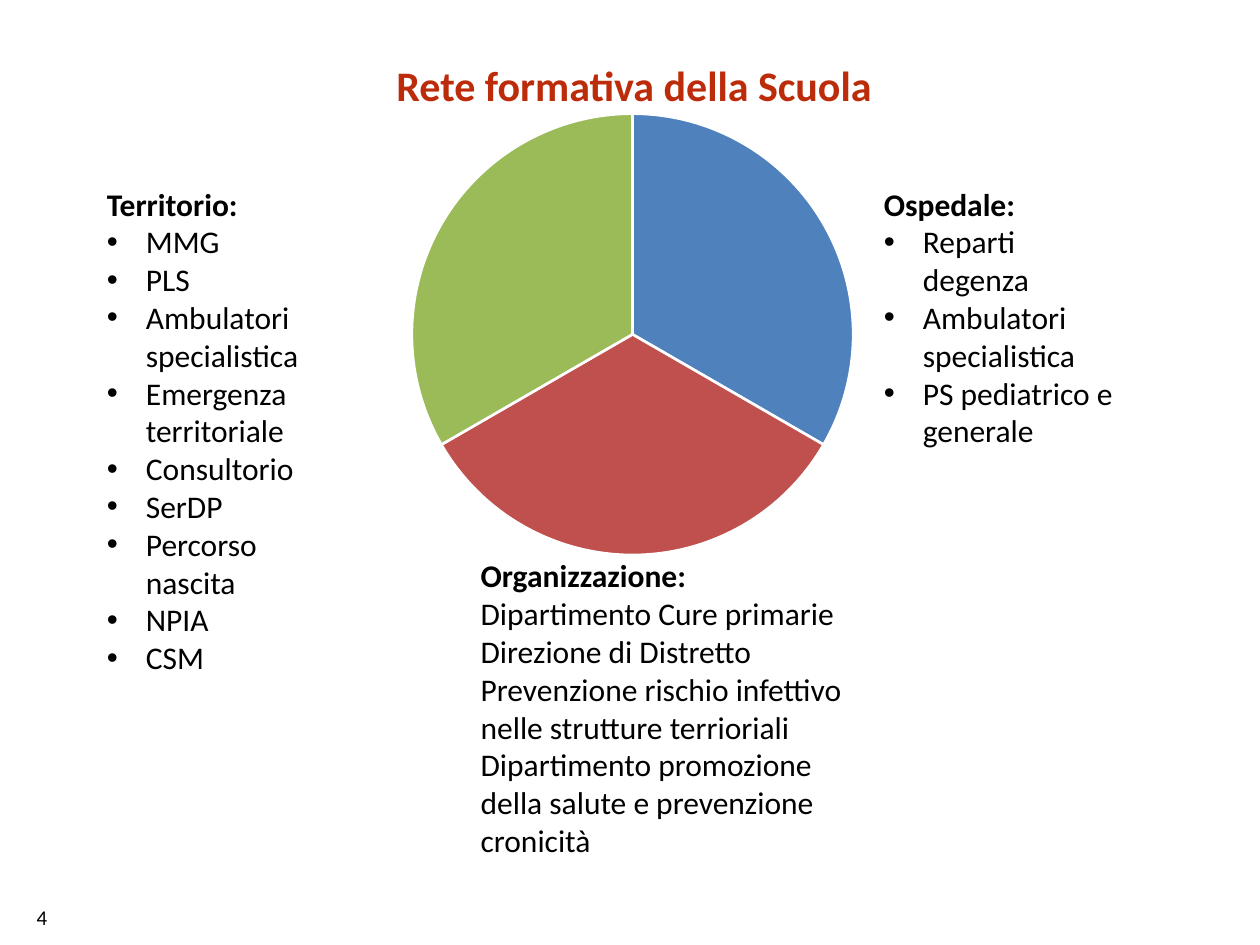
"""Build the slide on the training network of the school."""
from lxml.etree import SubElement
from pptx import Presentation
from pptx.chart.data import CategoryChartData
from pptx.dml.color import RGBColor
from pptx.enum.chart import XL_CHART_TYPE
from pptx.enum.text import MSO_ANCHOR, MSO_AUTO_SIZE, PP_ALIGN
from pptx.oxml import parse_xml
from pptx.oxml.ns import nsdecls, qn
from pptx.util import Inches, Pt

FONT = "Calibri"
BLACK = RGBColor(0x00, 0x00, 0x00)
WHITE = RGBColor(0xFF, 0xFF, 0xFF)
RUST = RGBColor(0xBC, 0x2B, 0x0A)
SLICES = (
    RGBColor(0x4F, 0x81, 0xBD),
    RGBColor(0xC0, 0x50, 0x4D),
    RGBColor(0x9B, 0xBB, 0x59),
)

CELL = Inches(1) / 12

TERRITORY = (
    "MMG", "PLS", "Ambulatori specialistica", "Emergenza territoriale",
    "Consultorio", "SerDP", "Percorso nascita", "NPIA", "CSM",
)
HOSPITAL = ("Reparti degenza", "Ambulatori specialistica", "PS pediatrico e generale")
ORGANISATION = (
    "Dipartimento Cure primarie",
    "Direzione di Distretto",
    "Prevenzione rischio infettivo nelle strutture terrioriali",
    "Dipartimento promozione della salute e prevenzione cronicità",
)


def area(column, row, columns, rows):
    """Turn grid cells of a twelfth of an inch into left, top, width and height."""
    return [round(cells * CELL) for cells in (column, row, columns, rows)]


def write(paragraph, text, size=18, color=BLACK, bold=False, indent=0, bullet=False):
    """Write one formatted paragraph, with an optional indent and bullet."""
    paragraph.alignment = PP_ALIGN.LEFT
    properties = paragraph._p.get_or_add_pPr()
    properties.set("marL", str(Inches(indent)))
    properties.set("indent", str(-Inches(indent) if bullet else 0))
    if bullet:
        SubElement(properties, qn("a:buFont")).set("typeface", "Arial")
        SubElement(properties, qn("a:buChar")).set("char", "•")
    run = paragraph.add_run()
    run.text = text
    run.font.name = FONT
    run.font.size = Pt(size)
    run.font.bold = bold
    run.font.color.rgb = color


def clear_margins(frame, top=0):
    """Remove the insets of a text frame, keeping an optional top one."""
    frame.margin_left = frame.margin_right = frame.margin_bottom = 0
    frame.margin_top = Inches(top)


def add_title(slide, text):
    """Place and write the slide title."""
    title = slide.shapes.title
    title.left, title.top, title.width, title.height = area(6.2, 5.4, 104, 9.7)
    frame = title.text_frame
    clear_margins(frame, top=0.02)
    frame.vertical_anchor = MSO_ANCHOR.TOP
    frame.auto_size = MSO_AUTO_SIZE.NONE
    write(frame.paragraphs[0], text, size=24, color=RUST, bold=True, indent=2.63)


def add_pie(slide):
    """Add the pie with one equal slice for each part of the network."""
    data = CategoryChartData()
    data.categories = ["1", "2", "3"]
    data.add_series("Series 1", [33] * len(SLICES))
    chart = slide.shapes.add_chart(
        XL_CHART_TYPE.PIE, *area(25.4, 9, 69, 45.7), data
    ).chart
    chart.has_legend = False
    chart.has_title = False
    chart.font.name = FONT
    chart.font.size = Pt(10)
    chart.font.color.rgb = BLACK
    plot = chart.plots[0]
    plot.vary_by_categories = True
    for index, color in enumerate(SLICES):
        style = plot.series[0].points[index].format
        style.fill.solid()
        style.fill.fore_color.rgb = color
        style.line.color.rgb = WHITE
        style.line.width = Pt(1.5)
    set_plot_area(chart, x=0.2, y=0.04, w=0.61, h=0.92)


def set_plot_area(chart, **shares):
    """Fix the inner plot area as shares of the chart size."""
    plot_area = chart._chartSpace.chart.plotArea
    for layout in plot_area.findall(qn("c:layout")):
        plot_area.remove(layout)
    sizes = "".join(f'<c:{side} val="{share}"/>' for side, share in shares.items())
    plot_area.insert(0, parse_xml(
        f'<c:layout {nsdecls("c")}><c:manualLayout><c:layoutTarget val="inner"/>'
        f'<c:xMode val="edge"/><c:yMode val="edge"/>{sizes}'
        f'</c:manualLayout></c:layout>'
    ))


def add_list(slide, place, heading, entries, bullet=True):
    """Add a bold heading with its entries below."""
    frame = slide.shapes.add_textbox(*area(*place)).text_frame
    frame.word_wrap = True
    write(frame.paragraphs[0], heading, bold=True)
    for entry in entries:
        write(frame.add_paragraph(), entry, bullet=bullet, indent=0.31 if bullet else 0)


def add_page_number(slide, number):
    """Add the page number in the bottom left corner."""
    frame = slide.shapes.add_textbox(*area(3, 86.5, 3.2, 2.3)).text_frame
    frame.word_wrap = True
    clear_margins(frame)
    write(frame.paragraphs[0], number, size=12, indent=0.04)
    frame.paragraphs[0].line_spacing = Pt(12.4)


def main():
    """Build and save the slide."""
    deck = Presentation()
    deck.slide_width, deck.slide_height = Inches(10), Inches(7.5)
    slide = deck.slides.add_slide(deck.slide_layouts.get_by_name("Title Only"))
    add_title(slide, "Rete formativa della Scuola")
    add_page_number(slide, "4")
    add_pie(slide)
    add_list(slide, (83, 17, 25, 26.6), "Ospedale:", HOSPITAL)
    add_list(slide, (9, 17, 25, 48.5), "Territorio:", TERRITORY)
    add_list(slide, (44.6, 52.4, 37, 37.6), "Organizzazione:", ORGANISATION, bullet=False)
    deck.save("out.pptx")


if __name__ == "__main__":
    main()
